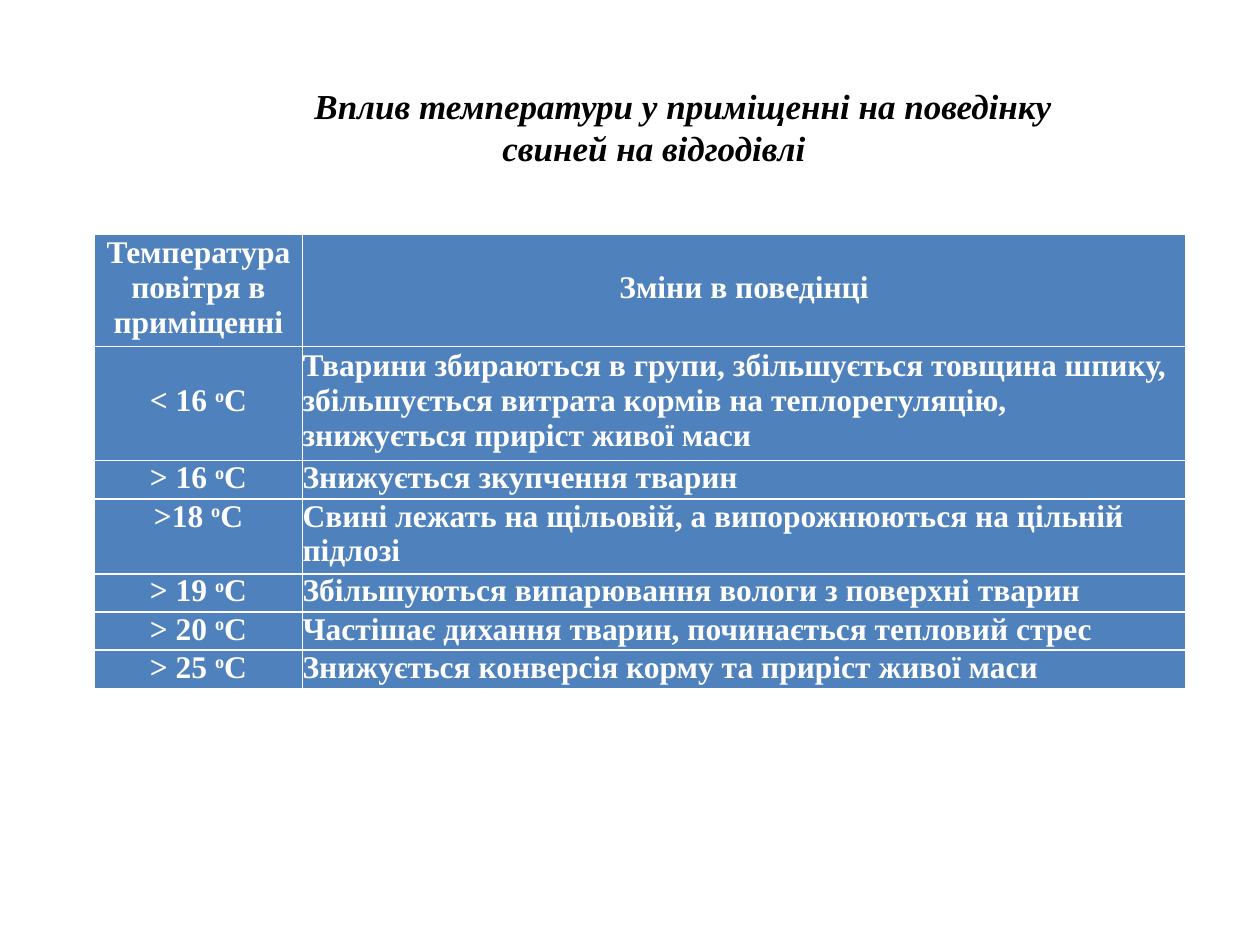
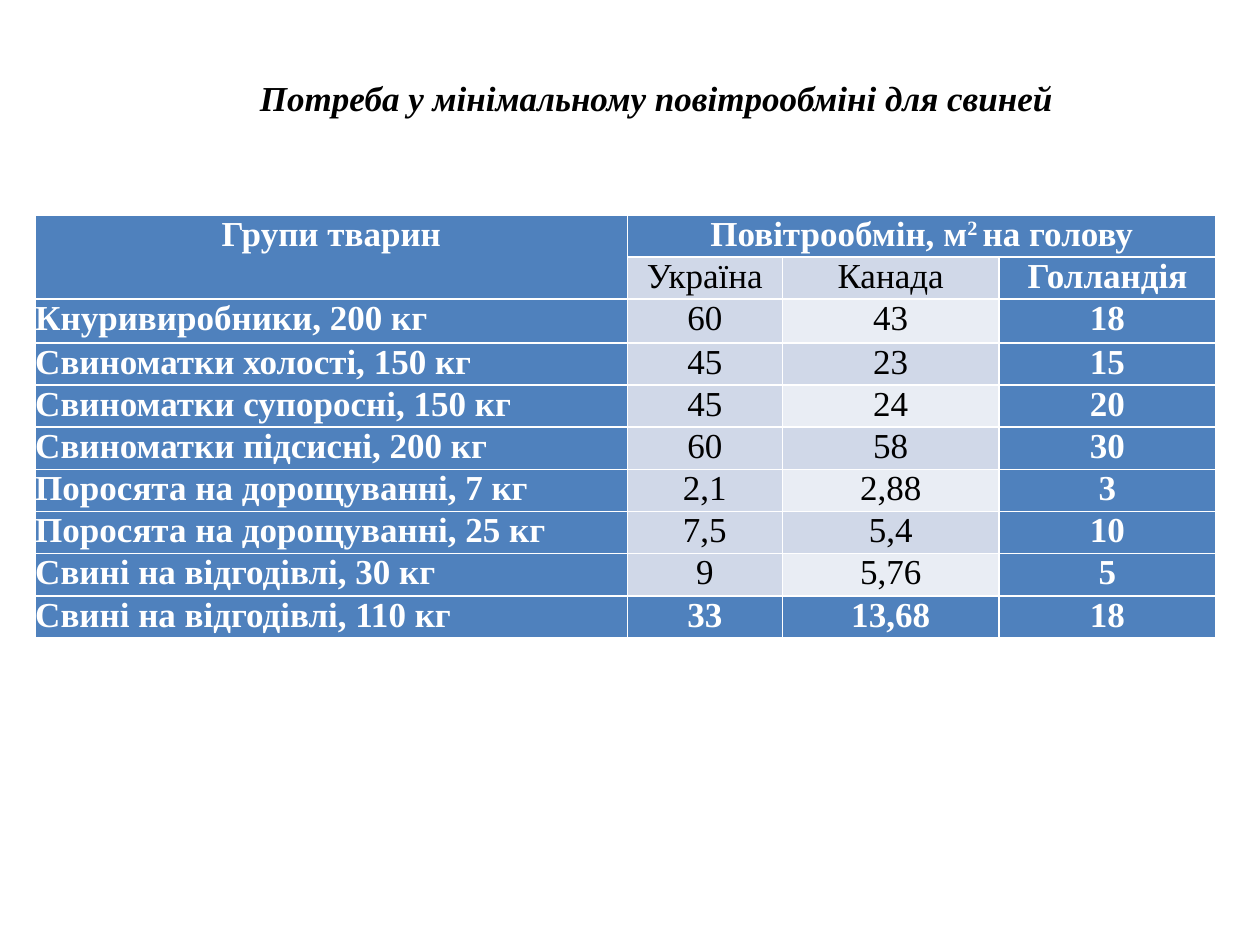
from dataclasses import dataclass

from pptx import Presentation
from pptx.dml.color import RGBColor as Rgb
from pptx.enum.text import MSO_ANCHOR as Anchor, MSO_AUTO_SIZE as Auto, PP_ALIGN as Align
from pptx.util import Cm, Pt

FONT = "Times New Roman"
BLUE, PALE, LIGHT = "4F81BD", "D0D8E8", "E9EDF4"
WHITE, BLACK = "FFFFFF", "000000"
INSET, INDENT = 0.38, 1.17
TITLE_SIZE = 20


@dataclass
class Box:
    left: float
    top: float
    width: float
    height: float


@dataclass
class Head:
    text: str
    box: Box
    align: Align


@dataclass
class Grid:
    left: float
    top: float
    cols: list[float]
    heights: list[float]
    rows: list[list[str]]
    aligns: list[Align]
    size: int
    heads: int = 1
    middle: tuple[int, ...] = ()
    merges: tuple[tuple[int, int, int, int], ...] = ()


HEAT = Grid(
    1.9, 4.73, [4.2, 17.8], [2.26, 2.3, 0.77, 1.51, 0.77, 0.77, 0.77],
    [
        ["Температура\nповітря в\nприміщенні", "Зміни в поведінці"],
        ["< 16 ^o^C", "Тварини збираються в групи, збільшується товщина шпику, "
                      "збільшується витрата кормів на теплорегуляцію,\n"
                      "знижується приріст живої маси"],
        ["> 16 ^o^C", "Знижується зкупчення тварин"],
        [">18 ^o^C", "Свині лежать на щільовій, а випорожнюються на цільній\nпідлозі"],
        ["> 19 ^o^C", "Збільшуються випарювання вологи з поверхні тварин"],
        ["> 20 ^o^C", "Частішає дихання тварин, починається тепловий стрес"],
        ["> 25 ^o^C", "Знижується конверсія корму та приріст живої маси"],
    ],
    [Align.CENTER, Align.LEFT], 18, middle=(0, 1),
)

AIR = Grid(
    0.71, 4.33, [11.94, 3.12, 4.37, 4.37], [0.85] * 2 + [0.88] + [0.85] * 7,
    [
        ["Групи тварин", "Повітрообмін, м^2 ^на голову", "", ""],
        ["", "Україна", "Канада", "Голландія"],
        ["Кнуривиробники, 200 кг", "60", "43", "18"],
        ["Свиноматки холості, 150 кг", "45", "23", "15"],
        ["Свиноматки супоросні, 150 кг", "45", "24", "20"],
        ["Свиноматки підсисні, 200 кг", "60", "58", "30"],
        ["Поросята на дорощуванні, 7 кг", "2,1", "2,88", "3"],
        ["Поросята на дорощуванні, 25 кг", "7,5", "5,4", "10"],
        ["Свині на відгодівлі, 30 кг", "9", "5,76", "5"],
        ["Свині на відгодівлі, 110 кг", "33", "13,68", "18"],
    ],
    [Align.LEFT] + [Align.CENTER] * 3, 20, heads=2,
    merges=((0, 0, 1, 0), (0, 1, 0, 3)),
)

PAGES = [
    (Head("Вплив температури у приміщенні на поведінку свиней на відгодівлі",
          Box(3.1, 1.32, 19, 2.87), Align.CENTER), HEAT),
    (Head("Потреба у мінімальному повітрообміні для свиней",
          Box(2.9, 1.17, 18.44, 2), Align.LEFT), AIR),
]


def color(code: str) -> Rgb:
    return Rgb.from_string(code)


def add_run(para, text: str, size: int, tone: str, bold: bool = True,
            slant: bool = False, sup: bool = False) -> None:
    run = para.add_run()
    run.text = text
    font = run.font
    font.name, font.size = FONT, Pt(size)
    font.bold, font.italic = bold, slant
    font.color.rgb = color(tone)
    if sup:
        run._r.get_or_add_rPr().set("baseline", "30000")


def add_title(slide, head: Head) -> None:
    shape, box = slide.shapes.title, head.box
    shape.left, shape.top = Cm(box.left), Cm(box.top)
    shape.width, shape.height = Cm(box.width), Cm(box.height)
    frame = shape.text_frame
    frame.auto_size, frame.word_wrap = Auto.NONE, True
    frame.vertical_anchor = Anchor.TOP
    frame.margin_left, frame.margin_top = Cm(INDENT), Cm(INSET)
    frame.margin_right = frame.margin_bottom = 0
    para = frame.paragraphs[0]
    para.alignment = head.align
    para._p.get_or_add_pPr().set("indent", str(Cm(INDENT)))
    add_run(para, head.text, TITLE_SIZE, BLACK, slant=True)


def pick_fill(grid: Grid, row: int, col: int) -> str:
    """Blue frames the table; the last inner column is banded by row."""
    last = len(grid.cols) - 1
    if row in (0, len(grid.rows) - 1) or col in (0, last):
        return BLUE
    return LIGHT if col == last - 1 and row % 2 == 0 else PALE


def fill_cell(cell, grid: Grid, row: int, col: int) -> None:
    fill = pick_fill(grid, row, col)
    cell.fill.solid()
    cell.fill.fore_color.rgb = color(fill)
    cell.margin_left = cell.margin_right = cell.margin_top = cell.margin_bottom = 0
    if row in grid.middle:
        cell.vertical_anchor = Anchor.MIDDLE
        cell.margin_bottom = Cm(0.12)
    if cell.is_spanned:
        return
    strong = fill == BLUE
    frame = cell.text_frame
    for num, line in enumerate(grid.rows[row][col].split("\n")):
        para = frame.add_paragraph() if num else frame.paragraphs[0]
        para.alignment = Align.CENTER if row < grid.heads else grid.aligns[col]
        for part, text in enumerate(line.split("^")):
            add_run(para, text, grid.size, WHITE if strong else BLACK,
                    bold=strong, sup=part % 2 == 1)


def add_grid(slide, grid: Grid) -> None:
    table = slide.shapes.add_table(
        len(grid.rows), len(grid.cols), Cm(grid.left), Cm(grid.top),
        Cm(sum(grid.cols)), Cm(sum(grid.heights))).table
    table.first_col = table.last_col = table.last_row = True
    for col, width in zip(table.columns, grid.cols):
        col.width = Cm(width)
    for row, height in zip(table.rows, grid.heights):
        row.height = Cm(height)
    for top, left, low, right in grid.merges:
        table.cell(top, left).merge(table.cell(low, right))
    for row in range(len(grid.rows)):
        for col in range(len(grid.cols)):
            fill_cell(table.cell(row, col), grid, row, col)


def main() -> None:
    deck = Presentation()
    deck.slide_width, deck.slide_height = Cm(25.4), Cm(19.05)
    for head, grid in PAGES:
        slide = deck.slides.add_slide(deck.slide_layouts[5])
        add_grid(slide, grid)
        add_title(slide, head)
    deck.save("out.pptx")


if __name__ == "__main__":
    main()
